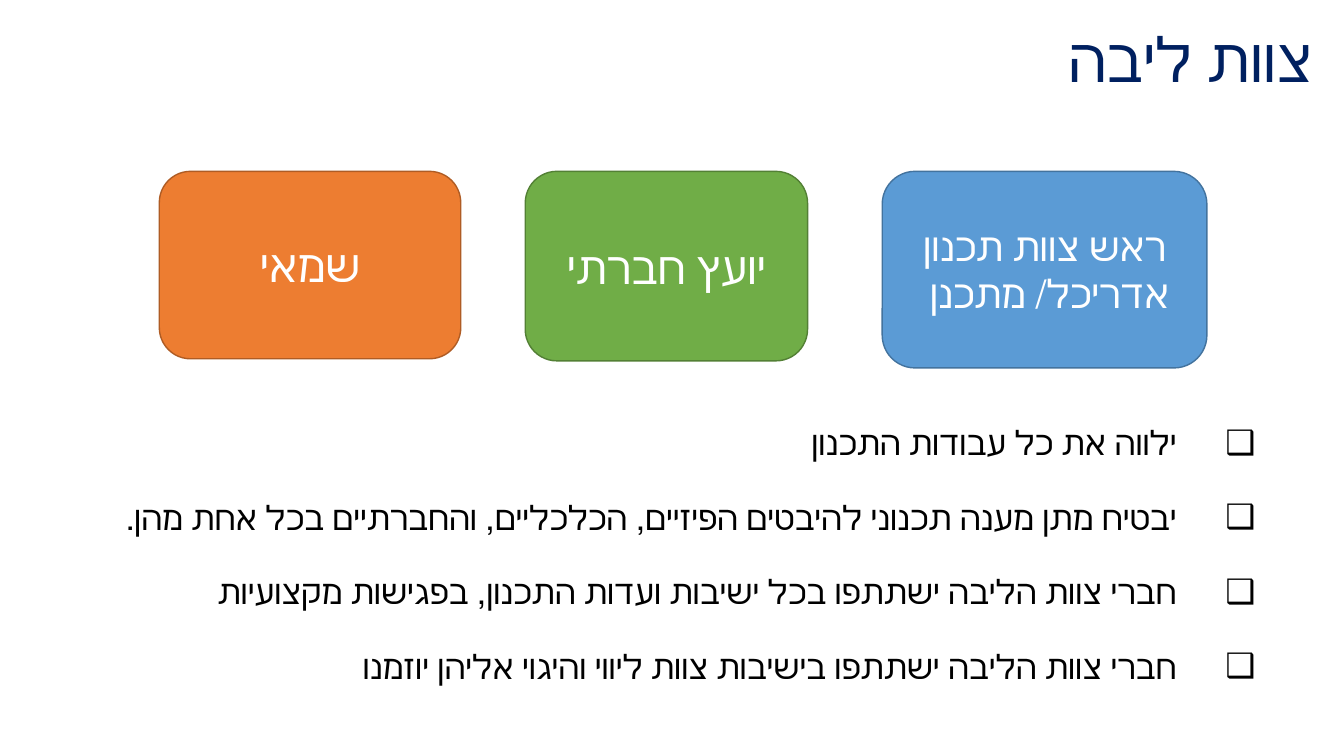
"""Builds the core team slide: a title, three role boxes and a right-to-left checklist."""
import pptx
import pptx.dml.color
import pptx.enum.shapes
import pptx.enum.text
import pptx.oxml.ns
import pptx.util
import lxml.etree

PX = 9144
FONT = "Arial"
NAVY = pptx.dml.color.RGBColor(0x00, 0x20, 0x60)
BLACK = pptx.dml.color.RGBColor(0x00, 0x00, 0x00)
WHITE = pptx.dml.color.RGBColor(0xFF, 0xFF, 0xFF)
BLUE = pptx.dml.color.RGBColor(0x5B, 0x9B, 0xD5)
BLUE_EDGE = pptx.dml.color.RGBColor(0x43, 0x73, 0x9E)
GREEN = pptx.dml.color.RGBColor(0x70, 0xAD, 0x47)
GREEN_EDGE = pptx.dml.color.RGBColor(0x53, 0x80, 0x35)
ORANGE = pptx.dml.color.RGBColor(0xED, 0x7D, 0x31)
ORANGE_EDGE = pptx.dml.color.RGBColor(0xAF, 0x5C, 0x24)
ALIGN = pptx.enum.text.PP_ALIGN
ANCHOR = pptx.enum.text.MSO_ANCHOR
qn = pptx.oxml.ns.qn


def place(box, left, top, width, height):
    """Sets the position and size of a box in px."""
    frame = {"left": left, "top": top, "width": width, "height": height}
    for name, value in frame.items():
        setattr(box, name, value * PX)


def write(box, lines, size, color, anchor, bullet=None, **layout):
    """Fills a box with right-to-left paragraphs, one for each line."""
    text = box.text_frame
    settings = {"word_wrap": True, "vertical_anchor": anchor,
                "auto_size": pptx.enum.text.MSO_AUTO_SIZE.NONE}
    for name, value in settings.items():
        setattr(text, name, value)
    for index, line in enumerate(lines):
        para = text.add_paragraph() if index else text.paragraphs[0]
        props = para._p.get_or_add_pPr()
        props.set("rtl", "1")
        if bullet:
            props.set("marL", str(78 * PX))
            props.set("indent", str(-78 * PX))
            lxml.etree.SubElement(props, qn("a:buFont"), typeface=FONT)
            lxml.etree.SubElement(props, qn("a:buChar"), char=bullet)
        for name, value in layout.items():
            setattr(para, name, value)
        if index == 0:
            para.space_before = pptx.util.Pt(0)
        span = para.add_run()
        span.text = line
        span.font.color.rgb = color
        for name, value in {"size": pptx.util.Pt(size), "name": FONT}.items():
            setattr(span.font, name, value)


deck = pptx.Presentation()
deck.slide_width = 1333 * PX
deck.slide_height = 750 * PX
page = deck.slides.add_slide(deck.slide_layouts[1])

title = page.shapes.title
place(title, 162, -10, 1150, 145)
write(title, ["צוות ליבה"], 44, NAVY, ANCHOR.MIDDLE,
      alignment=ALIGN.RIGHT, line_spacing=0.9)

roles = [
    (875, 322, 195, BLUE, BLUE_EDGE, 28, ["ראש צוות תכנון", "אדריכל/ מתכנן "]),
    (521, 280, 188, GREEN, GREEN_EDGE, 32, ["יועץ חברתי"]),
    (158, 299, 186, ORANGE, ORANGE_EDGE, 32, ["שמאי"]),
]
for left, width, height, fill, edge, size, lines in roles:
    role = page.shapes.add_shape(pptx.enum.shapes.MSO_SHAPE.ROUNDED_RECTANGLE, 0, 0, PX, PX)
    place(role, left, 170, width, height)
    role.shadow.inherit = False
    role.fill.solid()
    role.fill.fore_color.rgb = fill
    role.line.color.rgb = edge
    role.line.width = pptx.util.Pt(1)
    write(role, lines, size, WHITE, ANCHOR.MIDDLE, alignment=ALIGN.CENTER)

duties = page.placeholders[1]
place(duties, 93, 394, 1162, 425)
write(duties, [
    "ילווה את כל עבודות התכנון",
    "יבטיח מתן מענה תכנוני להיבטים הפיזיים, הכלכליים, והחברתיים בכל אחת מהן. ",
    "חברי צוות הליבה ישתתפו בכל ישיבות ועדות התכנון, בפגישות מקצועיות",
    "חברי צוות הליבה ישתתפו בישיבות צוות ליווי והיגוי אליהן יוזמנו",
], 24, BLACK, ANCHOR.TOP, bullet="❑",
    alignment=ALIGN.RIGHT, line_spacing=1.5, space_before=pptx.util.Pt(10))

deck.save("out.pptx")
